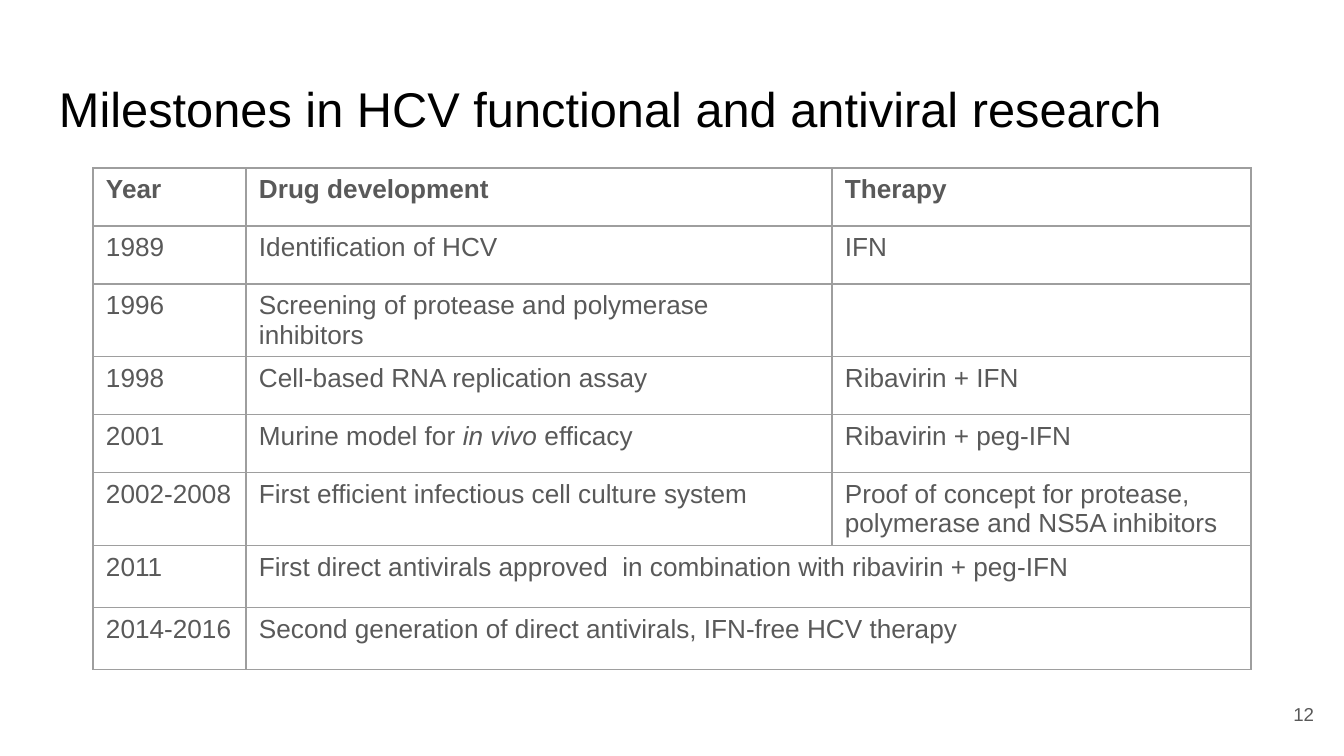
from pptx import Presentation
from pptx.dml.color import RGBColor
from pptx.enum.text import MSO_ANCHOR, MSO_AUTO_SIZE, PP_ALIGN
from pptx.oxml import parse_xml
from pptx.oxml.ns import nsdecls
from pptx.util import Emu, Pt

SCALE = 914400 / 134.4
COLORS = {"title": "000000", "text": "595959", "line": "9E9E9E", "back": "FFFFFF"}


def px(n):
    return Emu(round(n * SCALE))


def style(par, size, color, bold=False):
    par.font.name = "Arial"
    par.font.size = Pt(size)
    par.font.bold = bold
    par.font.color.rgb = RGBColor.from_string(COLORS[color])


deck = Presentation()
deck.slide_width, deck.slide_height = px(1344), px(756)
slide = deck.slides.add_slide(deck.slide_layouts[5])
slide.background.fill.solid()
slide.background.fill.fore_color.rgb = RGBColor.from_string(COLORS["back"])

# Title and page number
title = slide.shapes.title
title.left, title.top, title.width, title.height = px(46), px(66), px(1252), px(84)
title.text_frame.text = "Milestones in HCV functional and antiviral research"
page = slide.shapes.add_textbox(px(1246), px(685), px(81), px(58))
page.text_frame.text = "12"

for shape, size, color, align, anchor in [
    (title, 26.1, "title", PP_ALIGN.LEFT, MSO_ANCHOR.TOP),
    (page, 10, "text", PP_ALIGN.RIGHT, MSO_ANCHOR.MIDDLE),
]:
    frame = shape.text_frame
    frame.word_wrap = True
    frame.auto_size = MSO_AUTO_SIZE.NONE
    frame.vertical_anchor = anchor
    frame.margin_left = frame.margin_right = px(13)
    frame.margin_top = frame.margin_bottom = px(13)
    par = frame.paragraphs[0]
    par.alignment = align
    style(par, size, color)

# Table: asterisks enclose italics, None joins a cell to the one on its left
rows = [
    ("Year", "Drug development", "Therapy"),
    ("1989", "Identification of HCV", "IFN"),
    ("1996", "Screening of protease and polymerase inhibitors", ""),
    ("1998", "Cell-based RNA replication assay", "Ribavirin + IFN"),
    ("2001", "Murine model for *in vivo* efficacy", "Ribavirin + peg-IFN"),
    ("2002-2008", "First efficient infectious cell culture system",
     "Proof of concept for protease, polymerase and NS5A inhibitors"),
    ("2011", "First direct antivirals approved  in combination with ribavirin + peg-IFN", None),
    ("2014-2016", "Second generation of direct antivirals, IFN-free HCV therapy", None),
]
widths = [153, 586, 419]
heights = [58] * 5 + [62] * 3
table = slide.shapes.add_table(
    len(rows), len(widths), px(93), px(168), px(sum(widths)), px(sum(heights))
).table
table.horz_banding = False
for col, width in zip(table.columns, widths):
    col.width = px(width)
for row, height in zip(table.rows, heights):
    row.height = px(height)

for r, row in enumerate(rows):
    for c, text in enumerate(row):
        cell = table.cell(r, c)
        cell.fill.background()
        cell.margin_left = cell.margin_right = px(13)
        cell.margin_top = cell.margin_bottom = px(7)
        props = cell._tc.get_or_add_tcPr()
        for i, side in enumerate("LRTB"):
            props.insert(i, parse_xml(
                f'<a:ln{side} {nsdecls("a")} w="{Pt(0.75)}"><a:solidFill>'
                f'<a:srgbClr val="{COLORS["line"]}"/></a:solidFill></a:ln{side}>'
            ))
        par = cell.text_frame.paragraphs[0]
        style(par, 14, "text", bold=r == 0)
        if text is None:
            table.cell(r, c - 1).merge(cell)
        elif text:
            for i, part in enumerate(text.split("*")):
                run = par.add_run()
                run.text = part
                if i % 2:
                    run.font.italic = True

deck.save("out.pptx")
